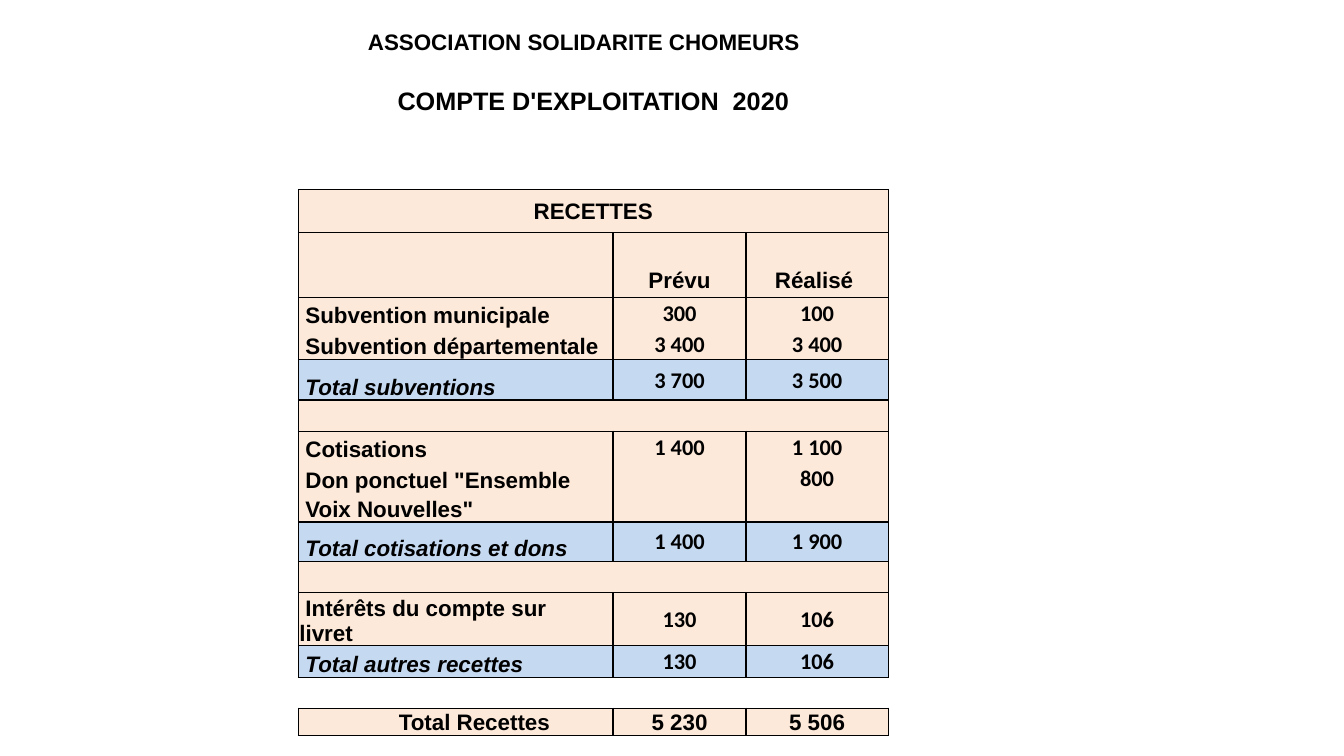
from lxml.etree import SubElement
from pptx import Presentation
from pptx.dml.color import RGBColor
from pptx.enum.text import MSO_ANCHOR as Anchor, PP_ALIGN as Align
from pptx.oxml.ns import qn
from pptx.util import Inches, Pt

# Content: row height, kind, border sides, label, planned, actual
ROWS = [
    (0.32, "heading", "", "ASSOCIATION SOLIDARITE CHOMEURS", "", ""),
    (0.30, "blank", "", "", "", ""),
    (0.30, "title", "", "COMPTE D'EXPLOITATION  2020", "", ""),
    (0.24, "blank", "", "", "", ""),
    (0.24, "blank", "", "", "", ""),
    (0.25, "blank", "B", "", "", ""),
    (0.43, "section", "LRTB", "RECETTES", "", ""),
    (0.31, "item", "LRT", "", "", ""),
    (0.33, "header", "LRB", "", "Prévu", "Réalisé"),
    (0.31, "item", "LRT", "Subvention municipale", "300", "100"),
    (0.31, "item", "LRB", "Subvention départementale", "3 400", "3 400"),
    (0.40, "subtotal", "LRTB", "Total subventions", "3 700", "3 500"),
    (0.31, "gap", "TB", "", "", ""),
    (0.31, "item", "LRT", "Cotisations", "1 400", "1 100"),
    (0.31, "item", "LR", 'Don ponctuel "Ensemble', "", "800"),
    (0.28, "item", "LRB", 'Voix Nouvelles"', "", ""),
    (0.39, "subtotal", "LRTB", "Total cotisations et dons", "1 400", "1 900"),
    (0.31, "gap", "TB", "", "", ""),
    (0.53, "item", "LRTB", "Intérêts du compte sur\vlivret", "130", "106"),
    (0.31, "subtotal", "LRTB", "Total autres recettes", "130", "106"),
    (0.31, "blank", "TB", "", "", ""),
    (0.27, "total", "LRTB", "Total Recettes", "5 230", "5 506"),
]
COLUMNS = [3.12, 1.32, 1.41]
LEFT, TOP = 2.96, 0.23
PEACH, BLUE, WHITE, BLACK = "FDE9D9", "C5D9F1", "FFFFFF", "000000"
FILLS = {"heading": WHITE, "title": WHITE, "blank": WHITE, "subtotal": BLUE}
MERGED = ("heading", "title", "section")
LABEL_MARGINS = {"heading": 0.69, "total": 0.38}
FIRST_LINE_INDENT = 0.06


def color(hex_string):
    return RGBColor.from_string(hex_string)


def draw_borders(cell, sides):
    props = cell._tc.get_or_add_tcPr()
    for side in "LRTB":
        line = SubElement(props, qn(f"a:ln{side}"), w=str(Pt(1)))
        if side in sides:
            fill = SubElement(line, qn("a:solidFill"))
            SubElement(fill, qn("a:srgbClr"), val=BLACK)
        else:
            SubElement(line, qn("a:noFill"))


def write_text(cell, text, kind, column):
    is_label = column == 0
    cell.margin_left = cell.margin_right = cell.margin_top = Inches(0.01)
    cell.margin_bottom = 0
    if is_label:
        cell.margin_left = Inches(LABEL_MARGINS.get(kind, 0.01))
    elif text == "Réalisé":
        cell.margin_right = Inches(0.07)
    bottom = is_label and kind != "section"
    cell.vertical_anchor = Anchor.BOTTOM if bottom else Anchor.MIDDLE
    cell.text_frame.text = text
    paragraph = cell.text_frame.paragraphs[0]
    if not text:
        # Small end mark keeps empty rows at their height
        SubElement(paragraph._p, qn("a:endParaRPr"), sz="1000")
        return
    left_aligned = is_label and kind in ("heading", "item", "subtotal")
    paragraph.alignment = Align.LEFT if left_aligned else Align.CENTER
    if is_label and kind in ("item", "subtotal"):
        paragraph_props = paragraph._p.get_or_add_pPr()
        paragraph_props.set("marL", "0")
        paragraph_props.set("indent", str(Inches(FIRST_LINE_INDENT)))
    is_amount = not is_label and kind in ("item", "subtotal")
    for run in paragraph.runs:
        run.font.name = "Calibri" if is_amount else "Arial"
        run.font.size = Pt(18 if kind == "title" else 16)
        run.font.bold = True
        run.font.italic = is_label and kind == "subtotal"
        run.font.color.rgb = color(BLACK)


prs = Presentation()
prs.slide_width, prs.slide_height = Inches(13.33), Inches(7.5)
slide = prs.slides.add_slide(prs.slide_layouts[6])

# Table frame
accounts = slide.shapes.add_table(
    len(ROWS), len(COLUMNS), Inches(LEFT), Inches(TOP),
    Inches(sum(COLUMNS)), Inches(sum(row[0] for row in ROWS))).table
accounts.first_row = accounts.horz_banding = False
for column, width in zip(accounts.columns, COLUMNS):
    column.width = Inches(width)

# Rows
last = len(COLUMNS) - 1
for r, (height, kind, sides, *texts) in enumerate(ROWS):
    accounts.rows[r].height = Inches(height)
    if kind in MERGED:
        accounts.cell(r, 0).merge(accounts.cell(r, last))
    for c, text in enumerate(texts):
        cell = accounts.cell(r, c)
        outer = {0: "L", last: "R"}.get(c, "") if kind == "gap" else ""
        draw_borders(cell, sides + outer)
        cell.fill.solid()
        cell.fill.fore_color.rgb = color(FILLS.get(kind, PEACH))
        write_text(cell, text, kind, c)

prs.save("out.pptx")
